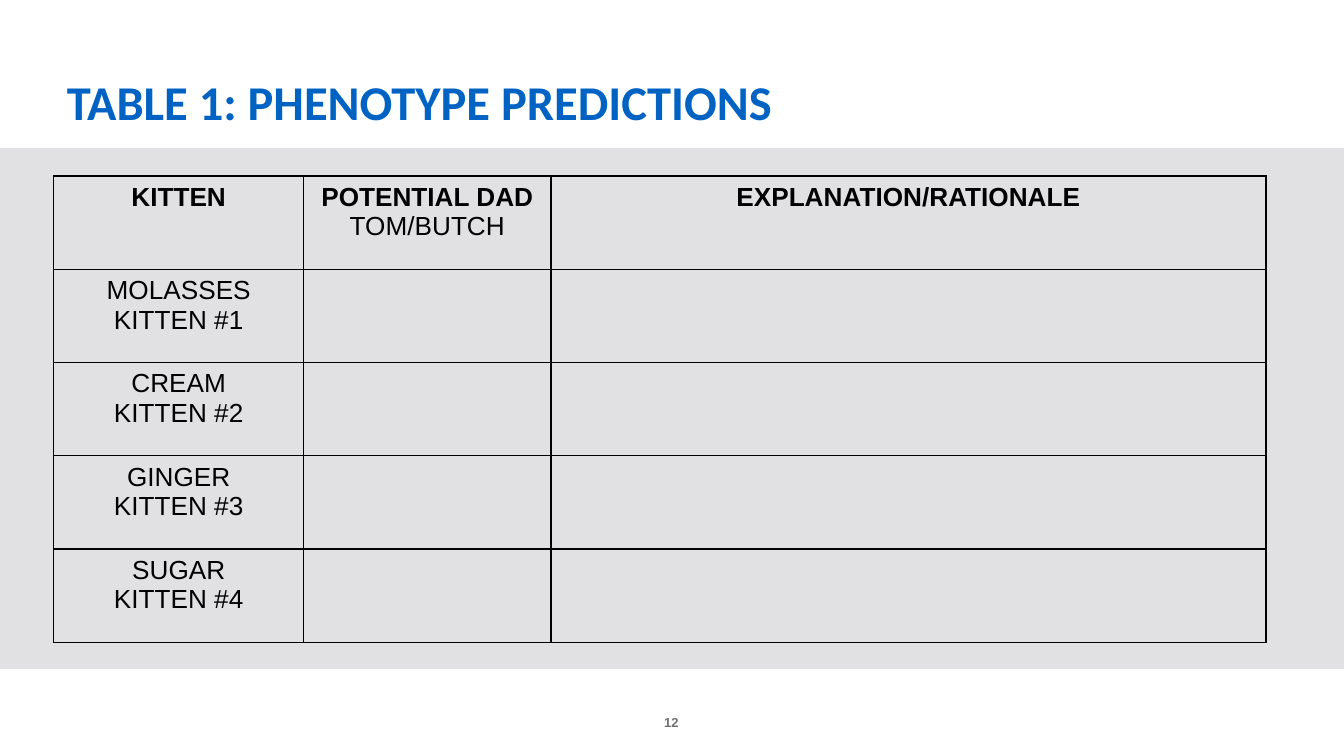
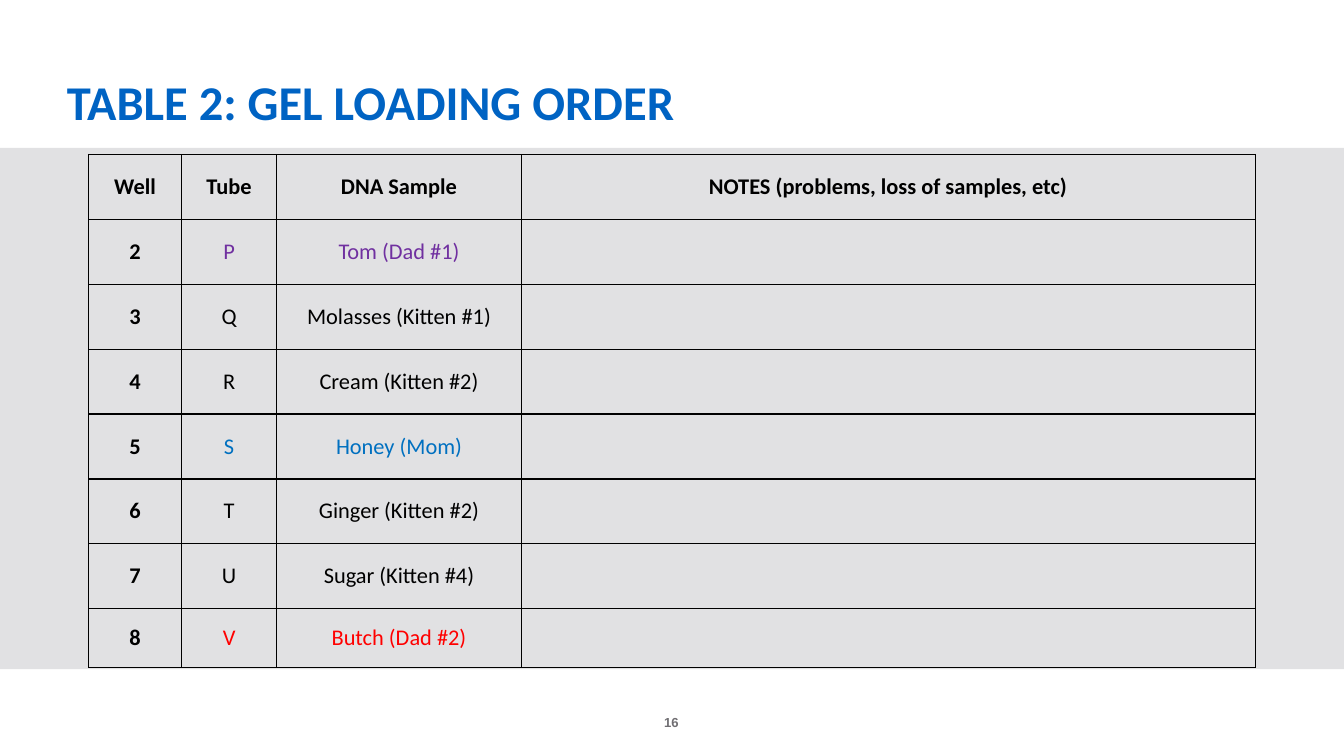
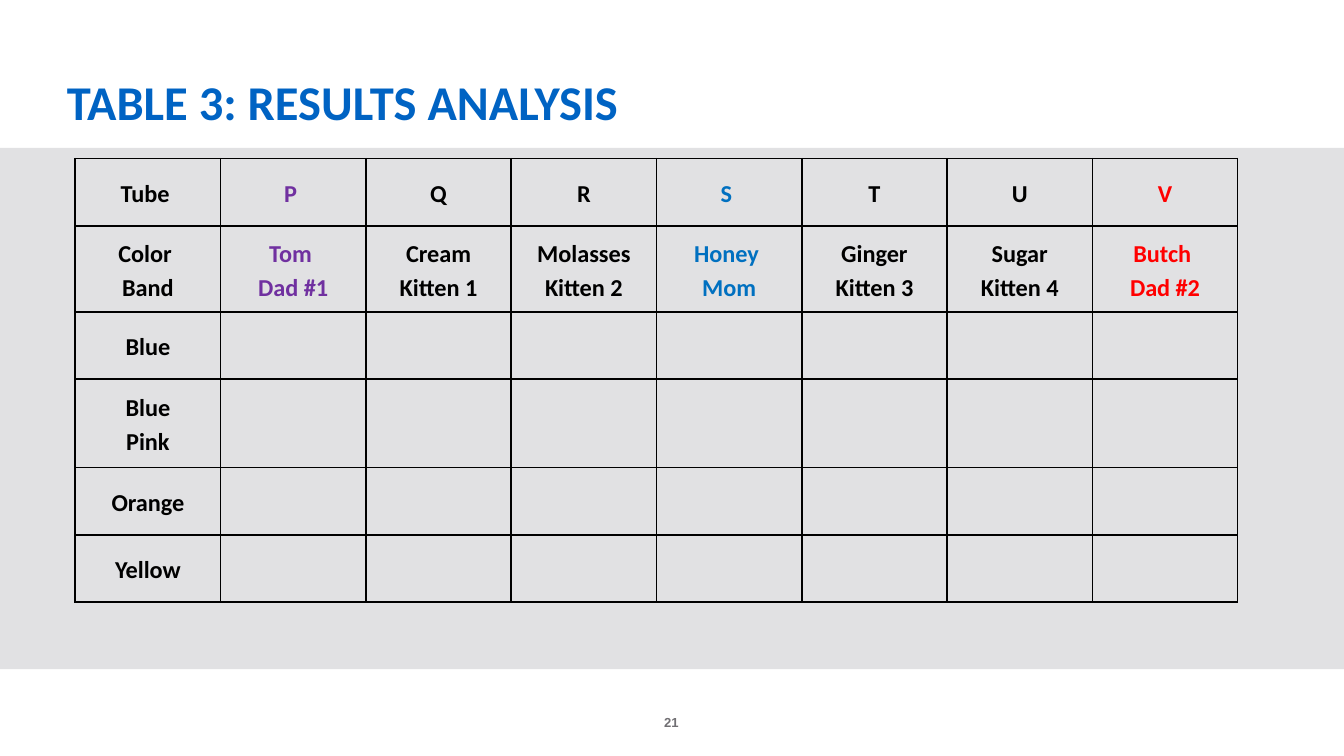
from lxml.etree import SubElement
from pptx import Presentation
from pptx.dml.color import RGBColor
from pptx.enum.shapes import MSO_SHAPE
from pptx.enum.text import MSO_ANCHOR, PP_ALIGN
from pptx.oxml.ns import qn
from pptx.util import Inches, Pt

WIDTH = 10
HEIGHT = WIDTH * 9 / 16
BLACK, BLUE, BAND, GREY = "000000", "0063C3", "E1E1E3", "716F73"
PURPLE, SKY, RED = "7030A0", "0070C0", "FF0000"

# Each parent cat and its tube share a colour; kittens stay black.
PARENT_COLOURS = {"P": PURPLE, "Tom": PURPLE, "S": SKY, "Honey": SKY, "V": RED, "Butch": RED}

TABLES = [
    {
        "title": "TABLE 1: PHENOTYPE PREDICTIONS", "number": 12,
        "left": 0.4, "top": 1.31,
        "columns": [1.86, 1.84, 5.32], "rows": [3.47 / 5] * 5,
        "font": "Arial", "size": 14, "spacing": 1, "border": 0.75,
        "anchor": MSO_ANCHOR.TOP, "insets": (0.1, 0.05),
        "bold": lambda row, column, line: row == 0 and line == 0,
        "cells": [
            ["KITTEN", "POTENTIAL DAD\nTOM/BUTCH", "EXPLANATION/RATIONALE"],
            ["MOLASSES\nKITTEN #1"],
            ["CREAM\nKITTEN #2"],
            ["GINGER\nKITTEN #3"],
            ["SUGAR\nKITTEN #4"],
        ],
    },
    {
        "title": "TABLE 2: GEL LOADING ORDER", "number": 16,
        "left": 0.66, "top": 1.15,
        "columns": [0.69, 0.71, 1.82, 5.46], "rows": [3.38 / 7] * 7 + [0.43],
        "font": "Calibri", "size": 12, "spacing": 1, "border": 0.75,
        "anchor": MSO_ANCHOR.MIDDLE, "insets": (0.07, 0.07),
        "bold": lambda row, column, line: row == 0 or column == 0,
        "cells": [
            ["Well", "Tube", "DNA Sample", "NOTES (problems, loss of samples, etc)"],
            ["2", "P", "Tom (Dad #1)"],
            ["3", "Q", "Molasses (Kitten #1)"],
            ["4", "R", "Cream (Kitten #2)"],
            ["5", "S", "Honey (Mom)"],
            ["6", "T", "Ginger (Kitten #2)"],
            ["7", "U", "Sugar (Kitten #4)"],
            ["8", "V", "Butch (Dad #2)"],
        ],
    },
    {
        "title": "TABLE 3: RESULTS ANALYSIS", "number": 21,
        "left": 0.56, "top": 1.18,
        "columns": [8.65 / 8] * 8, "rows": [0.5, 0.64, 0.5, 0.66, 0.5, 0.5],
        "font": "Calibri", "size": 13, "spacing": 1.15, "border": 1,
        "anchor": MSO_ANCHOR.MIDDLE, "insets": (0.07, 0.07),
        "bold": lambda row, column, line: True,
        "cells": [
            ["Tube ", "P ", "Q", "R", "S ", "T", "U", "V"],
            ["Color \nBand", "Tom \nDad #1", "Cream\nKitten 1", "Molasses\nKitten 2",
             "Honey \nMom", "Ginger\nKitten 3", "Sugar\nKitten 4", "Butch \nDad #2"],
            ["Blue"],
            ["Blue\nPink"],
            ["Orange"],
            ["Yellow"],
        ],
    },
]


def colour(value):
    return RGBColor.from_string(value)


def add_span(para, text, font, size, ink, bold):
    span = para.add_run()
    span.text = text
    span.font.name = font
    span.font.size = Pt(size)
    span.font.bold = bold
    span.font.color.rgb = colour(ink)


deck = Presentation()
deck.slide_width, deck.slide_height = Inches(WIDTH), Inches(HEIGHT)

for entry in TABLES:
    page = deck.slides.add_slide(deck.slide_layouts[6])

    band = page.shapes.add_shape(
        MSO_SHAPE.RECTANGLE, 0, Inches(1.1), deck.slide_width, Inches(3.88))
    band.shadow.inherit = False
    band.fill.solid()
    band.fill.fore_color.rgb = colour(BAND)
    band.line.fill.background()

    # Page number and title
    for text, place, inset, align, style in (
        (str(entry["number"]), (4.54, 5.13, 0.91, 0.3), (0, 0),
         PP_ALIGN.CENTER, ("Arial", 7, GREY, True)),
        (entry["title"], (0.4, 0.48, 9.2, 0.54), (0.1, 0.05),
         PP_ALIGN.LEFT, ("Calibri", 26, BLUE, True)),
    ):
        box = page.shapes.add_textbox(*map(Inches, place))
        frame = box.text_frame
        frame.word_wrap = True
        frame.vertical_anchor = MSO_ANCHOR.BOTTOM
        frame.margin_left = frame.margin_right = Inches(inset[0])
        frame.margin_top = frame.margin_bottom = Inches(inset[1])
        para = frame.paragraphs[0]
        para.alignment = align
        add_span(para, text, *style)

    columns, rows = entry["columns"], entry["rows"]
    table = page.shapes.add_table(
        len(rows), len(columns), Inches(entry["left"]), Inches(entry["top"]),
        Inches(sum(columns)), Inches(sum(rows))).table
    table.first_row = table.horz_banding = False
    for column, width in enumerate(columns):
        table.columns[column].width = Inches(width)

    for row, height in enumerate(rows):
        table.rows[row].height = Inches(height)
        texts = entry["cells"][row]
        for column in range(len(columns)):
            cell = table.cell(row, column)
            cell.vertical_anchor = entry["anchor"]
            cell.margin_left = cell.margin_right = Inches(entry["insets"][0])
            cell.margin_top = cell.margin_bottom = Inches(entry["insets"][1])

            properties = cell._tc.get_or_add_tcPr()
            for side in ("a:lnL", "a:lnR", "a:lnT", "a:lnB"):
                edge = SubElement(properties, qn(side), w=str(Pt(entry["border"])))
                fill = SubElement(edge, qn("a:solidFill"))
                SubElement(fill, qn("a:srgbClr"), val=BLACK)
            cell.fill.background()

            if column >= len(texts):
                continue
            ink = PARENT_COLOURS.get(texts[column].split()[0], BLACK)
            for line, text in enumerate(texts[column].split("\n")):
                frame = cell.text_frame
                para = frame.add_paragraph() if line else frame.paragraphs[0]
                para.alignment = PP_ALIGN.CENTER
                para.line_spacing = float(entry["spacing"])
                add_span(para, text, entry["font"], entry["size"], ink,
                         entry["bold"](row, column, line))

deck.save("out.pptx")
